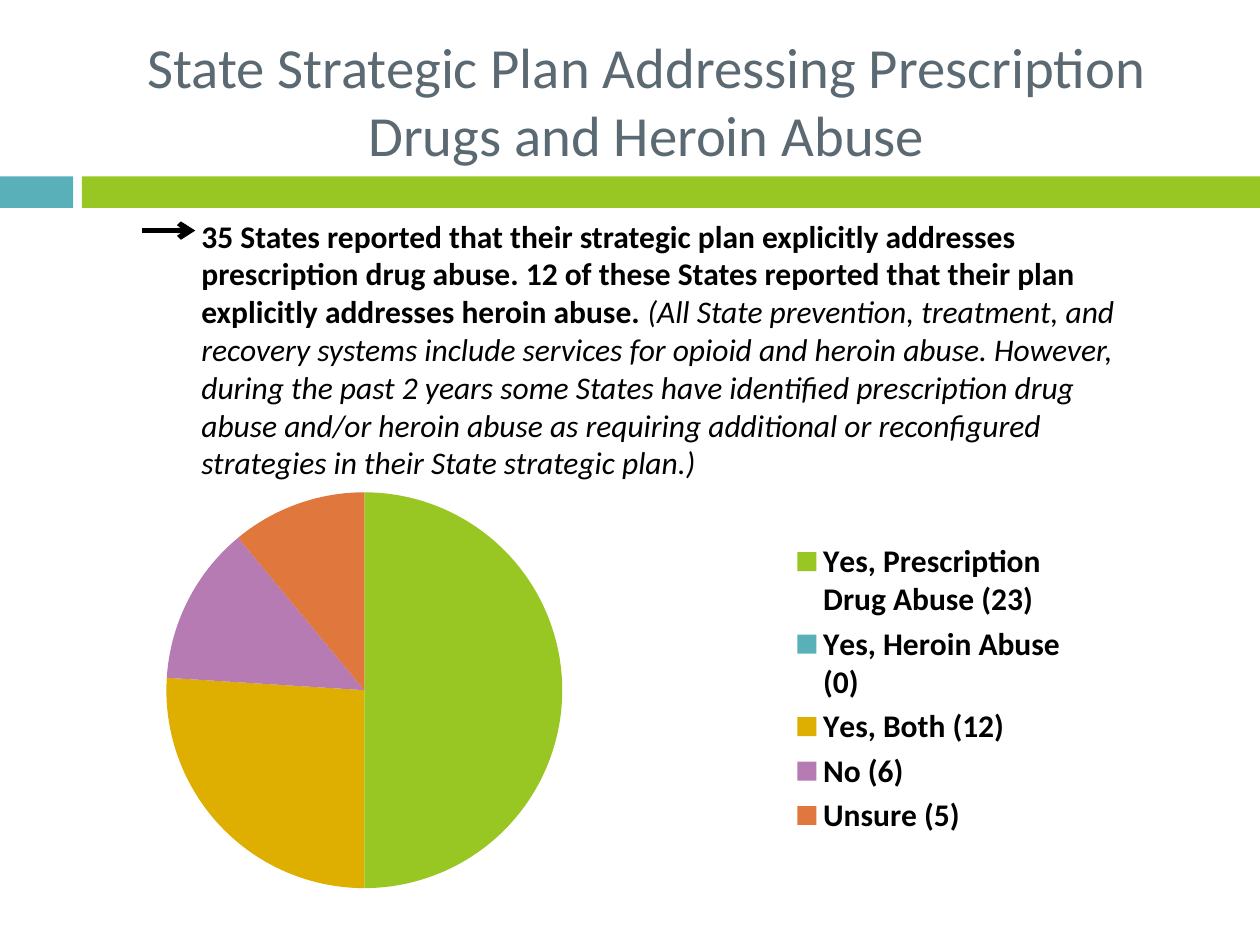
from lxml import etree
from pptx import Presentation
from pptx.chart.data import CategoryChartData
from pptx.dml.color import RGBColor
from pptx.enum.chart import XL_CHART_TYPE, XL_LEGEND_POSITION
from pptx.enum.shapes import MSO_CONNECTOR, MSO_SHAPE
from pptx.enum.text import MSO_ANCHOR, MSO_AUTO_SIZE, PP_ALIGN
from pptx.oxml import parse_xml
from pptx.oxml.ns import nsdecls, qn
from pptx.util import Inches, Pt

PIE = XL_CHART_TYPE.PIE
LEGEND_RIGHT = XL_LEGEND_POSITION.RIGHT
STRAIGHT = MSO_CONNECTOR.STRAIGHT
RECTANGLE = MSO_SHAPE.RECTANGLE
MIDDLE = MSO_ANCHOR.MIDDLE
NO_FIT = MSO_AUTO_SIZE.NONE
CENTER = PP_ALIGN.CENTER

THEME = {
    "font": "Calibri",
    "title_size": 32.4,
    "body_size": 18,
    "slate": "5B6973",
    "black": "000000",
    "green": "98C723",
    "teal": "59B0B9",
    "gold": "DEAE00",
    "purple": "B77BB4",
    "orange": "E0773C",
}

TITLE = "State Strategic Plan Addressing Prescription Drugs and Heroin Abuse"
FINDING = [
    ("35 States reported that their strategic plan explicitly addresses "
     "prescription drug abuse. 12 of these States reported that their plan "
     "explicitly addresses heroin abuse. ", {"bold": True}),
    ("(All State prevention, treatment, and recovery systems include services "
     "for opioid and heroin abuse. However, during the past 2 years some States "
     "have identified prescription drug abuse and/or heroin abuse as requiring "
     "additional or reconfigured strategies in their State strategic plan.)",
     {"italic": True}),
]
ANSWERS = [
    ("Yes, Prescription Drug Abuse (23)", 50, "green"),
    ("Yes, Heroin Abuse (0)", 0, "teal"),
    ("Yes, Both (12)", 26, "gold"),
    ("No (6)", 13, "purple"),
    ("Unsure (5)", 11, "orange"),
]
BAND_TOP, BAND_HEIGHT = 1.4, 0.25
BANDS = [(0, 0.58, "teal"), (0.65, 9.35, "green")]
TITLE_BOX = (0.67, 0.25, 8.92, 1.08)
FINDING_BOX = (1.5, 1.67, 7.75, 2.22)
CHART_BOX = (1.25, 3.75, 7.33, 3.43)
ARROW = (1.13, 1.83, 1.55, 1.83)
PIE_AREA = {"x": 0.002, "y": 0.046, "w": 0.444, "h": 0.916}


def inches(values):
    return [Inches(value) for value in values]


def color(name):
    return RGBColor.from_string(THEME[name])


def style(font, size, ink, **formats):
    values = {"name": THEME["font"], "size": Pt(THEME[size]), **formats}
    for key, value in values.items():
        setattr(font, key, value)
    font.color.rgb = color(ink)


def add_title(slide):
    title = slide.shapes.title
    title.left, title.top, title.width, title.height = inches(TITLE_BOX)
    frame = title.text_frame
    frame.text = TITLE
    frame.word_wrap = True
    frame.auto_size = NO_FIT
    frame.vertical_anchor = MIDDLE
    heading = frame.paragraphs[0]
    heading.alignment = CENTER
    style(heading.runs[0].font, "title_size", "slate")


def add_bands(slide):
    for left, width, fill in BANDS:
        band = slide.shapes.add_shape(
            RECTANGLE, *inches((left, BAND_TOP, width, BAND_HEIGHT)))
        band.shadow.inherit = False
        band.fill.solid()
        band.fill.fore_color.rgb = color(fill)
        band.line.fill.background()


def add_answers(slide):
    data = CategoryChartData()
    data.categories = [label for label, _, _ in ANSWERS]
    data.add_series("Series 1", [share for _, share, _ in ANSWERS])
    chart = slide.shapes.add_chart(PIE, *inches(CHART_BOX), data).chart
    style(chart.font, "body_size", "black")
    chart.has_title = False
    chart.has_legend = True
    chart.legend.position = LEGEND_RIGHT
    chart.legend.include_in_layout = False
    style(chart.legend.font, "body_size", "black", bold=True)

    plot = chart.plots[0]
    plot.vary_by_categories = True
    for index, (_, _, fill) in enumerate(ANSWERS):
        wedge = plot.series[0].points[index].format
        wedge.fill.solid()
        wedge.fill.fore_color.rgb = color(fill)
        wedge.line.fill.background()

    area = chart.element.find(".//" + qn("c:plotArea"))
    for automatic in area.findall(qn("c:layout")):
        area.remove(automatic)
    settings = [("layoutTarget", "inner"), ("xMode", "edge"), ("yMode", "edge")]
    settings += PIE_AREA.items()
    fields = "".join(f'<c:{key} val="{value}"/>' for key, value in settings)
    area.insert(0, parse_xml(
        f'<c:layout {nsdecls("c")}><c:manualLayout>{fields}'
        '</c:manualLayout></c:layout>'))


def add_finding(slide):
    frame = slide.shapes.add_textbox(*inches(FINDING_BOX)).text_frame
    frame.word_wrap = True
    for words, formats in FINDING:
        run = frame.paragraphs[0].add_run()
        run.text = words
        style(run.font, "body_size", "black", **formats)


def add_arrow(slide):
    arrow = slide.shapes.add_connector(STRAIGHT, *inches(ARROW))
    arrow.line.color.rgb = color("black")
    arrow.line.width = Pt(3)
    etree.SubElement(arrow.line._get_or_add_ln(), qn("a:tailEnd"), type="arrow")
    etree.SubElement(arrow._element.spPr, qn("a:effectLst"))


def main():
    deck = Presentation()
    deck.slide_width, deck.slide_height = inches((10, 7.5))
    slide = deck.slides.add_slide(deck.slide_layouts[5])
    for add_part in (add_bands, add_title, add_answers, add_finding, add_arrow):
        add_part(slide)
    deck.save("out.pptx")


if __name__ == "__main__":
    main()
